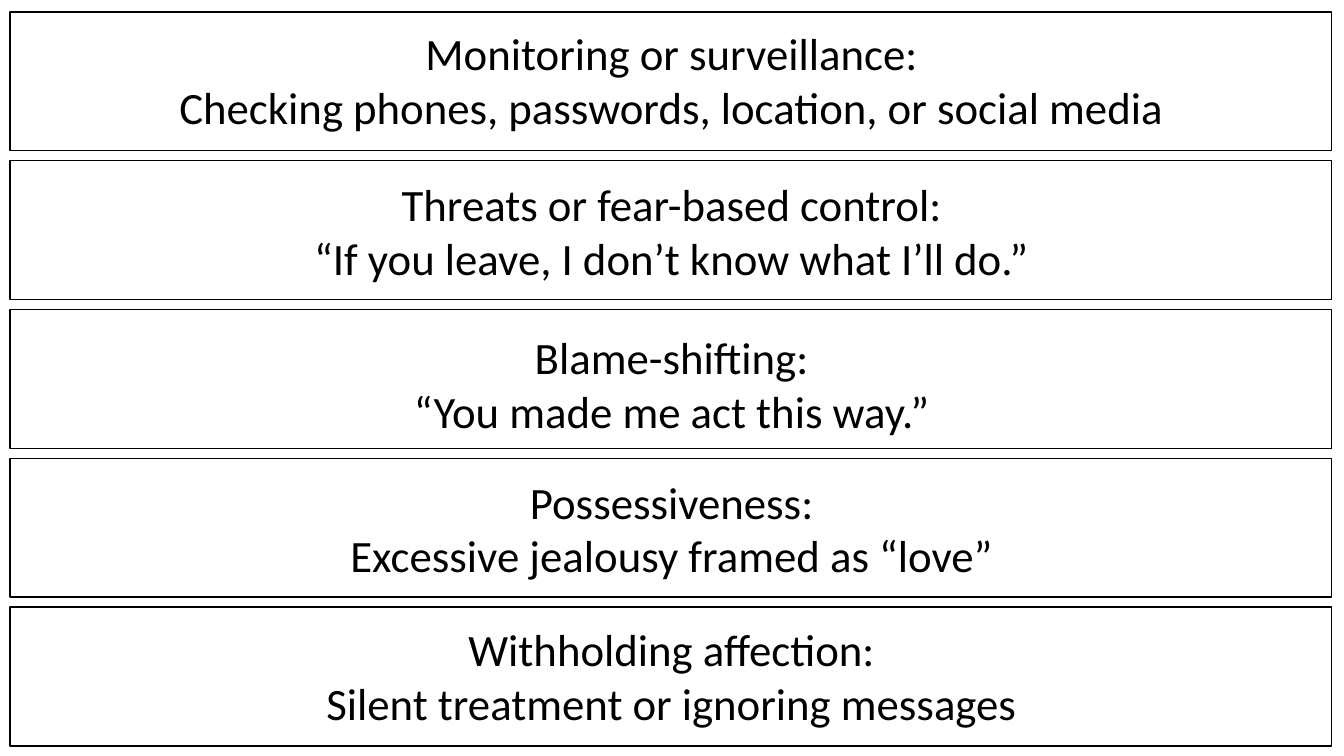
from pptx import Presentation
from pptx.dml.color import RGBColor as RGB
from pptx.enum.shapes import MSO_SHAPE as Shape
from pptx.enum.text import MSO_AUTO_SIZE as Fit, PP_ALIGN as Align
from pptx.util import Cm, Pt

HUES = {"ink": "000000", "paper": "FFFFFF"}
WIDE, HIGH = 33.87, 19.05
LEFT, TOP, STEP = 0.25, 0.3, 3.75
BAND_W, BAND_H, TEXT_H = 33.3, 3.5, 3

# heading, detail, text width, text drop below the band's top
SIGNS = [
    ("Monitoring or surveillance:",
     "Checking phones, passwords, location, or social media", 33.3, 0.23),
    ("Threats or fear-based control:",
     "“If you leave, I don’t know what I’ll do.”", 33.3, 0.28),
    ("Blame-shifting:", "“You made me act this way.”", 16.3, 0.38),
    ("Possessiveness:", "Excessive jealousy framed as “love”", 33.3, 0.28),
    ("Withholding affection:",
     "Silent treatment or ignoring messages", 29.03, 0.25),
]


def hue(name):
    """Return the named colour."""
    return RGB.from_string(HUES[name])


def write(slide, lines, box, size=32, font="Calibri", ink="ink", align=Align.CENTER):
    """Add a text box with one paragraph per line."""
    frame = slide.shapes.add_textbox(*map(Cm, box)).text_frame
    frame.word_wrap = True
    frame.auto_size = Fit.SHAPE_TO_FIT_TEXT
    frame.text = "\n".join(lines)
    for para in frame.paragraphs:
        para.alignment = align
        para.font.size = Pt(size)
        para.font.name = font
        para.font.color.rgb = hue(ink)


def add_band(slide, box, lines, width, drop):
    """Draw one outlined band with its text centred on the slide."""
    band = slide.shapes.add_shape(Shape.RECTANGLE, *map(Cm, box))
    band.shadow.inherit = False
    band.fill.solid()
    band.fill.fore_color.rgb = hue("paper")
    band.line.color.rgb = hue("ink")
    band.line.width = Pt(1)
    left, top, wide, _ = box
    mid = left + wide / 2 + 0.03
    write(slide, lines, (mid - width / 2, top + drop, width, TEXT_H))


def main():
    """Build the slide and save it."""
    deck = Presentation()
    deck.slide_width, deck.slide_height = Cm(WIDE), Cm(HIGH)
    slide = deck.slides.add_slide(deck.slide_layouts[6])
    for row, (head, detail, width, drop) in enumerate(SIGNS):
        box = (LEFT, TOP + row * STEP, BAND_W, BAND_H)
        add_band(slide, box, (head, detail), width, drop)
    deck.save("out.pptx")


if __name__ == "__main__":
    main()
